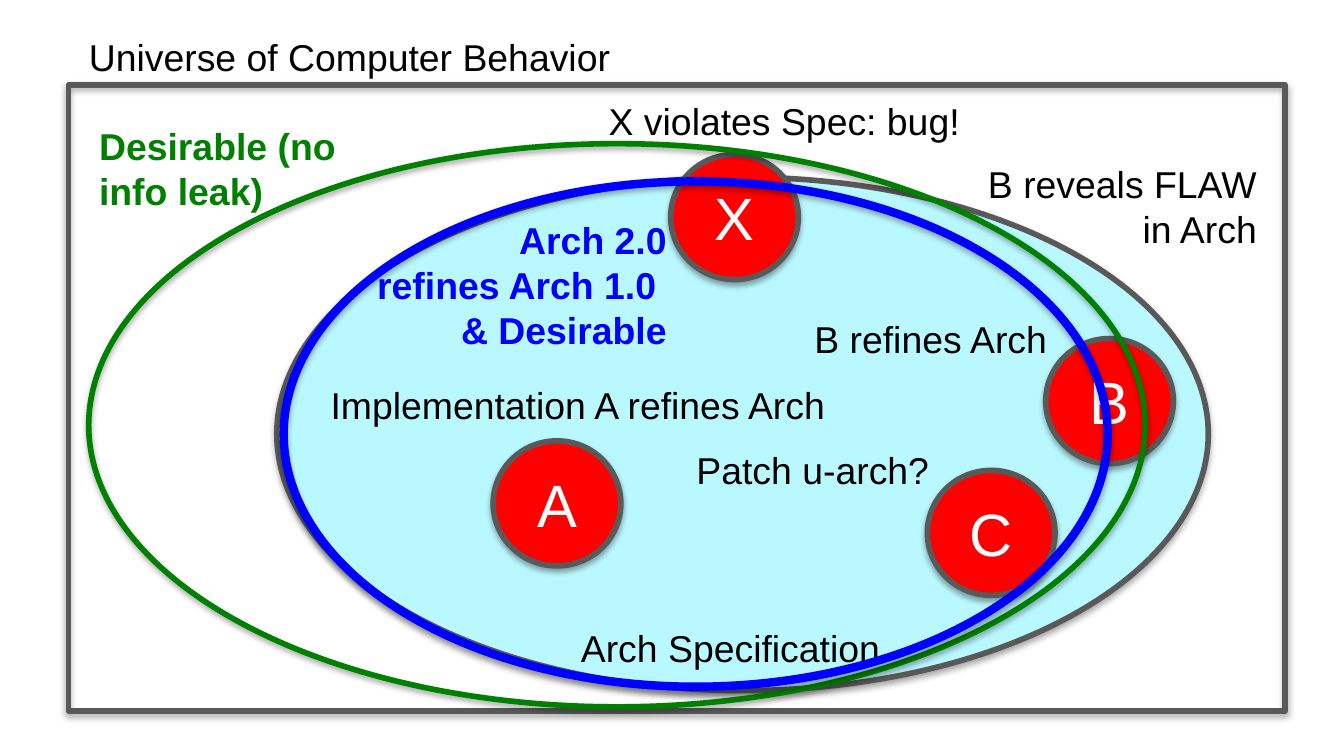
import pptx
import pptx.dml.color
import pptx.enum.shapes
import pptx.enum.text
import pptx.oxml
import pptx.oxml.ns
import pptx.util

Pt = pptx.util.Pt
RGBColor = pptx.dml.color.RGBColor
SHAPE = pptx.enum.shapes.MSO_SHAPE
ALIGN = pptx.enum.text.PP_ALIGN

BLACK = RGBColor(0x00, 0x00, 0x00)
WHITE = RGBColor(0xFF, 0xFF, 0xFF)
GRAY = RGBColor(0x59, 0x59, 0x59)
CYAN = RGBColor(0xBA, 0xF8, 0xFF)
RED = RGBColor(0xFF, 0x00, 0x00)
GREEN = RGBColor(0x00, 0x80, 0x00)
BLUE = RGBColor(0x00, 0x00, 0xFF)

FONT = "Arial"
CIRCLE_WIDTH, CIRCLE_HEIGHT = 68.4, 67

SHADOW_XML = (
    f'<a:outerShdw {pptx.oxml.ns.nsdecls("a")} blurRad="{Pt(3.1)}" '
    f'dist="{Pt(1.8)}" dir="5400000" rotWithShape="0">'
    '<a:srgbClr val="000000"><a:alpha val="35000"/></a:srgbClr></a:outerShdw>'
)


def write(frame, text, size, color, align, bold=False):
    frame.text = text
    frame.word_wrap = True
    for paragraph in frame.paragraphs:
        paragraph.alignment = align
        for run in paragraph.runs:
            run.font.name = FONT
            run.font.size = Pt(size)
            run.font.bold = bold
            run.font.color.rgb = color


def add_region(slide, kind, left, top, width, height, fill=None, line=GRAY, weight=3):
    """Outlined shape with a soft shadow below it."""
    region = slide.shapes.add_shape(kind, Pt(left), Pt(top), Pt(width), Pt(height))
    if fill is None:
        region.fill.background()
    else:
        region.fill.solid()
        region.fill.fore_color.rgb = fill
    region.line.color.rgb = line
    region.line.width = Pt(weight)
    region.shadow.inherit = False
    effects = region._element.spPr.find(pptx.oxml.ns.qn("a:effectLst"))
    effects.append(pptx.oxml.parse_xml(SHADOW_XML))
    return region


def add_implementation(slide, letter, left, top):
    circle = add_region(slide, SHAPE.OVAL, left, top, CIRCLE_WIDTH, CIRCLE_HEIGHT, RED)
    write(circle.text_frame, letter, 32, WHITE, ALIGN.CENTER)
    circle.text_frame.vertical_anchor = pptx.enum.text.MSO_ANCHOR.MIDDLE


def add_label(slide, text, left, top, width, height=31.5,
              align=ALIGN.LEFT, color=BLACK, bold=False):
    label = slide.shapes.add_textbox(Pt(left), Pt(top), Pt(width), Pt(height))
    write(label.text_frame, text, 20, color, align, bold)


def main():
    deck = pptx.Presentation()
    deck.slide_width, deck.slide_height = Pt(720), Pt(405)
    slide = deck.slides.add_slide(deck.slide_layouts[6])

    # Universe
    add_region(slide, SHAPE.RECTANGLE, 36.7, 45.4, 651.6, 335.5)
    add_label(slide, "Universe of Computer Behavior", 40.5, 14.8, 319.7)

    # Architecture specification
    add_region(slide, SHAPE.OVAL, 148.3, 95, 499, 275, CYAN)
    add_label(slide, "Arch Specification", 254.2, 331.2, 274.3, align=ALIGN.CENTER)

    # Implementations X, A and B
    add_implementation(slide, "X", 359.3, 82.8)
    add_label(slide, "X violates Spec: bug!", 319, 49, 274.3)
    add_implementation(slide, "A", 264.2, 236.2)
    add_label(slide, "Implementation A refines Arch", 170, 201.3, 289.4)
    add_implementation(slide, "B", 560.2, 181.4)
    add_label(slide, "B refines Arch", 410.4, 165.6, 157.7, align=ALIGN.RIGHT)

    # Desirable behavior
    add_region(slide, SHAPE.OVAL, 47.5, 77, 566, 301.7, line=GREEN)
    add_label(slide, "Desirable (no info leak)", 46, 62.6, 144, 55.7,
              color=GREEN, bold=True)
    add_label(slide, "B reveals FLAW\nin Arch", 459.4, 82.8, 221, 55.7,
              align=ALIGN.RIGHT)

    # Patched implementation C
    add_implementation(slide, "C", 496.8, 252)
    add_label(slide, "Patch u-arch?", 347.2, 236.2, 157.7, align=ALIGN.RIGHT)

    # Refined architecture
    add_region(slide, SHAPE.OVAL, 152, 97.2, 441.4, 270.7, line=BLUE, weight=4.5)
    add_label(slide, "Arch 2.0\nrefines Arch 1.0 \n& Desirable", 166.3, 113, 198, 80,
              align=ALIGN.RIGHT, color=BLUE, bold=True)

    deck.save("out.pptx")


if __name__ == "__main__":
    main()
